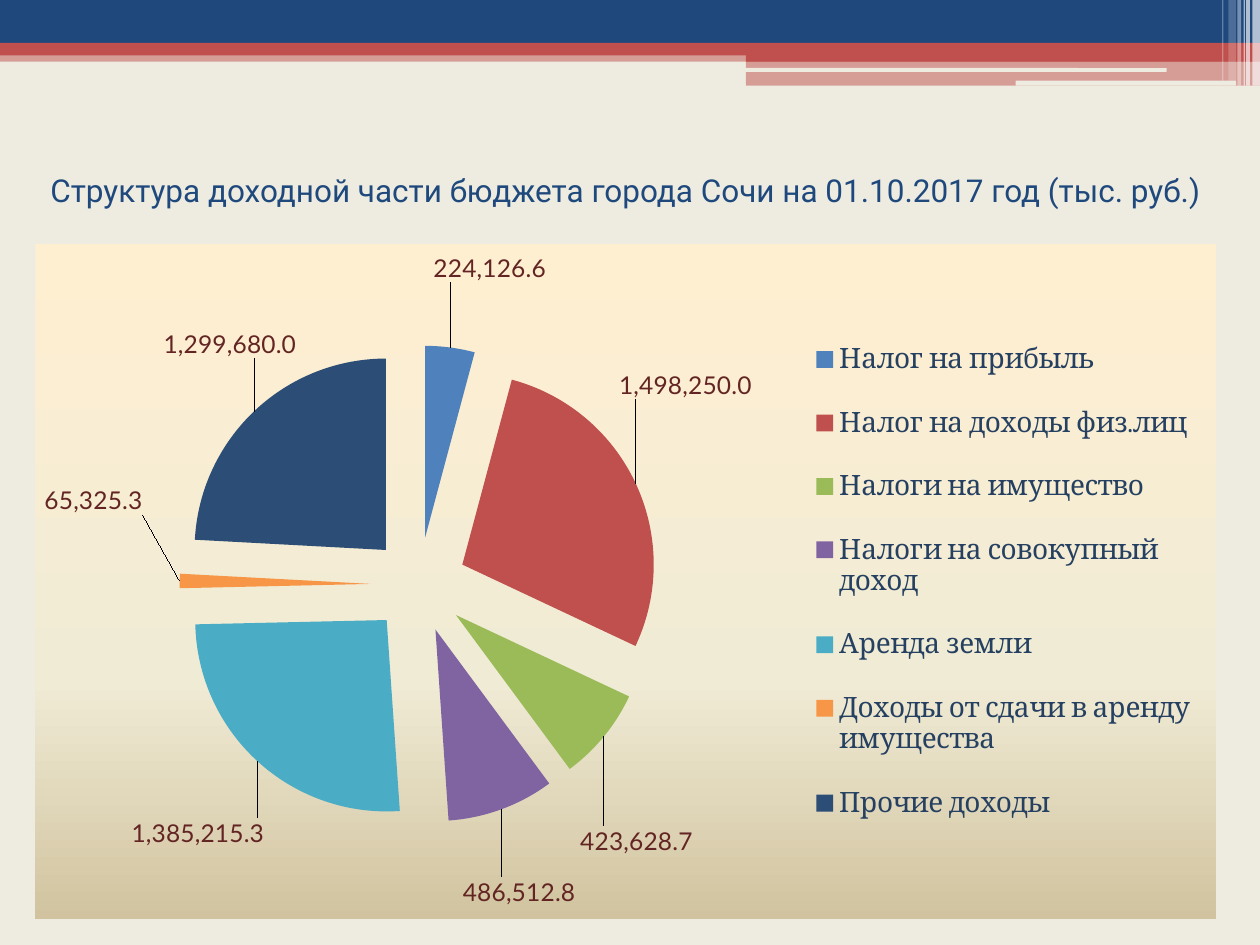
from typing import NamedTuple

from lxml.etree import SubElement
from pptx import Presentation
from pptx.chart.data import CategoryChartData
from pptx.dml.color import RGBColor
from pptx.enum.chart import XL_CHART_TYPE, XL_LABEL_POSITION, XL_LEGEND_POSITION
from pptx.enum.shapes import MSO_SHAPE as Shape
from pptx.enum.text import MSO_ANCHOR, PP_ALIGN
from pptx.oxml import parse_xml
from pptx.oxml.ns import nsdecls, qn
from pptx.util import Inches, Pt

NAVY, RED, CREAM, WHITE = "1F497D", "C0504D", "EEECE1", "FFFFFF"


class Band(NamedTuple):
    left: float
    top: float
    width: float
    height: float
    color: str
    alpha: int = 100
    shape: Shape = Shape.RECTANGLE


class Income(NamedTuple):
    name: str
    amount: float
    color: str
    label_dx: float  # label shift, as a share of the chart width
    label_dy: float  # label shift, as a share of the chart height


BANDS = [
    Band(0, 0.4, 10, 0.09, RED, 50),
    Band(0, 0, 10, 0.34, NAVY),
    Band(0, 0.34, 10, 0.1, RED),
    Band(5.92, 0.39, 4.08, 0.1, RED),
    Band(5.92, 0.48, 4.08, 0.2, RED, 50),
    Band(5.91, 0.54, 3.35, 0.03, CREAM, shape=Shape.ROUNDED_RECTANGLE),
    Band(8.06, 0.64, 1.75, 0.04, CREAM, shape=Shape.ROUNDED_RECTANGLE),
    Band(9.94, 0, 0.06, 0.68, WHITE, 65),
    Band(9.89, 0, 0.03, 0.68, WHITE, 65),
    Band(9.87, 0, 0.01, 0.68, WHITE, 60),
    Band(9.82, 0, 0.03, 0.68, WHITE, 40),
    Band(9.75, 0, 0.06, 0.64, WHITE, 20),
    Band(9.7, 0, 0.01, 0.64, WHITE, 30),
]

INCOMES = [
    Income("Налог на прибыль", 224126.6, "4F81BD", -0.015, -0.085),
    Income("Налог на доходы физ.лиц", 1498250, RED, -0.02, -0.12),
    Income("Налоги на имущество", 423628.7, "9BBB59", -0.025, 0.125),
    Income("Налоги на совокупный доход", 486512.8, "8064A2", -0.035, 0.09),
    Income("Аренда земли", 1385215.3, "4BACC6", 0.01, 0.075),
    Income("Доходы от сдачи в аренду имущества", 65325.3, "F79646", -0.025, -0.12),
    Income("Прочие доходы", 1299680, "2C4D75", 0.04, -0.07),
]

PANEL_STOPS = [(0, "FFEFD1"), (65, "F0EBD5"), (100, "D1C39F")]


def rgb(color: str) -> RGBColor:
    return RGBColor.from_string(color)


def set_font(font, name: str, size: float, color: str) -> None:
    font.name, font.size, font.bold = name, Pt(size), False
    font.color.rgb = rgb(color)


def draw_band(slide, band: Band) -> None:
    bar = slide.shapes.add_shape(band.shape, *map(Inches, band[:4]))
    bar.shadow.inherit = False
    bar.fill.solid()
    bar.fill.fore_color.rgb = rgb(band.color)
    bar.line.fill.background()
    if band.alpha < 100:
        color = bar.fill._xPr.find(".//" + qn("a:srgbClr"))
        SubElement(color, qn("a:alpha"), val=str(band.alpha * 1000))


def layout(**parts: float):
    """Manual chart layout; parts are shares of the chart size."""
    modes = ""
    if "w" in parts:
        modes = '<c:xMode val="edge"/><c:yMode val="edge"/>'
        if parts.pop("inner", False):
            modes = '<c:layoutTarget val="inner"/>' + modes
    values = "".join(f'<c:{key} val="{value}"/>' for key, value in parts.items())
    return parse_xml(f'<c:layout {nsdecls("c")}><c:manualLayout>{modes}{values}'
                     "</c:manualLayout></c:layout>")


def draw_title(slide, text: str) -> None:
    title = slide.shapes.add_textbox(Inches(0.28), Inches(0.92), Inches(9.37), Inches(1.17))
    frame = title.text_frame
    frame.word_wrap = True
    frame.vertical_anchor = MSO_ANCHOR.MIDDLE
    paragraph = frame.paragraphs[0]
    paragraph.text = text
    paragraph.alignment = PP_ALIGN.CENTER
    set_font(paragraph.font, "Roboto", 18, NAVY)


def fill_panel(chart) -> None:
    stops = "".join(f'<a:gs pos="{pos * 1000}"><a:srgbClr val="{color}"/></a:gs>'
                    for pos, color in PANEL_STOPS)
    panel = parse_xml(f'<c:spPr {nsdecls("c", "a")}><a:gradFill><a:gsLst>{stops}</a:gsLst>'
                      '<a:lin ang="5400000" scaled="0"/></a:gradFill>'
                      "<a:ln><a:noFill/></a:ln></c:spPr>")
    chart._chartSpace.find(qn("c:chart")).addnext(panel)


def draw_income_pie(slide, incomes: list[Income]) -> None:
    data = CategoryChartData(number_format="#,##0.0")
    data.categories = [income.name for income in incomes]
    data.add_series("Series 1", [income.amount for income in incomes])
    chart = slide.shapes.add_chart(XL_CHART_TYPE.PIE, Inches(0.28), Inches(1.94),
                                   Inches(9.37), Inches(5.35), data).chart
    chart.has_title = False
    set_font(chart.font, "Cambria", 18, "000000")
    fill_panel(chart)

    # Plot area and legend
    plot_area = chart._chartSpace.find(".//" + qn("c:plotArea"))
    for automatic in plot_area.findall(qn("c:layout")):
        plot_area.remove(automatic)
    plot_area.insert(0, layout(inner=True, x=0.12, y=0.15, w=0.41, h=0.71))
    chart.has_legend = True
    legend = chart.legend
    legend.position = XL_LEGEND_POSITION.RIGHT
    legend.include_in_layout = False
    set_font(legend.font, "Cambria", 16, "254061")
    for automatic in legend._element.findall(qn("c:layout")):
        legend._element.remove(automatic)
    legend._element.find(qn("c:legendPos")).addnext(layout(x=0.65, y=0.1, w=0.34, h=0.8))

    # Slices pulled apart, each with its own label place
    plot = chart.plots[0]
    plot.vary_by_categories = True
    slices = plot.series[0]
    slices._element.find(qn("c:tx")).addnext(
        parse_xml(f'<c:explosion {nsdecls("c")} val="25"/>'))
    labels = slices.data_labels
    labels.show_value = True
    labels.number_format = "#,##0.0"
    labels.number_format_is_linked = False
    set_font(labels.font, "Lato", 14, "632523")
    for index, income in enumerate(incomes):
        point = slices.points[index]
        point.format.fill.solid()
        point.format.fill.fore_color.rgb = rgb(income.color)
        point.format.line.fill.background()
        label = point.data_label
        set_font(label.font, "Lato", 14, "632523")
        label.position = XL_LABEL_POSITION.OUTSIDE_END
        label_xml = labels._element.findall(qn("c:dLbl"))[index]
        label_xml.find(qn("c:idx")).addnext(layout(x=income.label_dx, y=income.label_dy))


def main() -> None:
    deck = Presentation()
    deck.slide_width, deck.slide_height = Inches(10), Inches(7.5)
    slide = deck.slides.add_slide(deck.slide_layouts[6])
    slide.background.fill.solid()
    slide.background.fill.fore_color.rgb = rgb(CREAM)
    for band in BANDS:
        draw_band(slide, band)
    draw_title(slide, "Структура доходной части бюджета города Сочи на 01.10.2017 год (тыс. руб.)")
    draw_income_pie(slide, INCOMES)
    deck.save("out.pptx")


if __name__ == "__main__":
    main()
